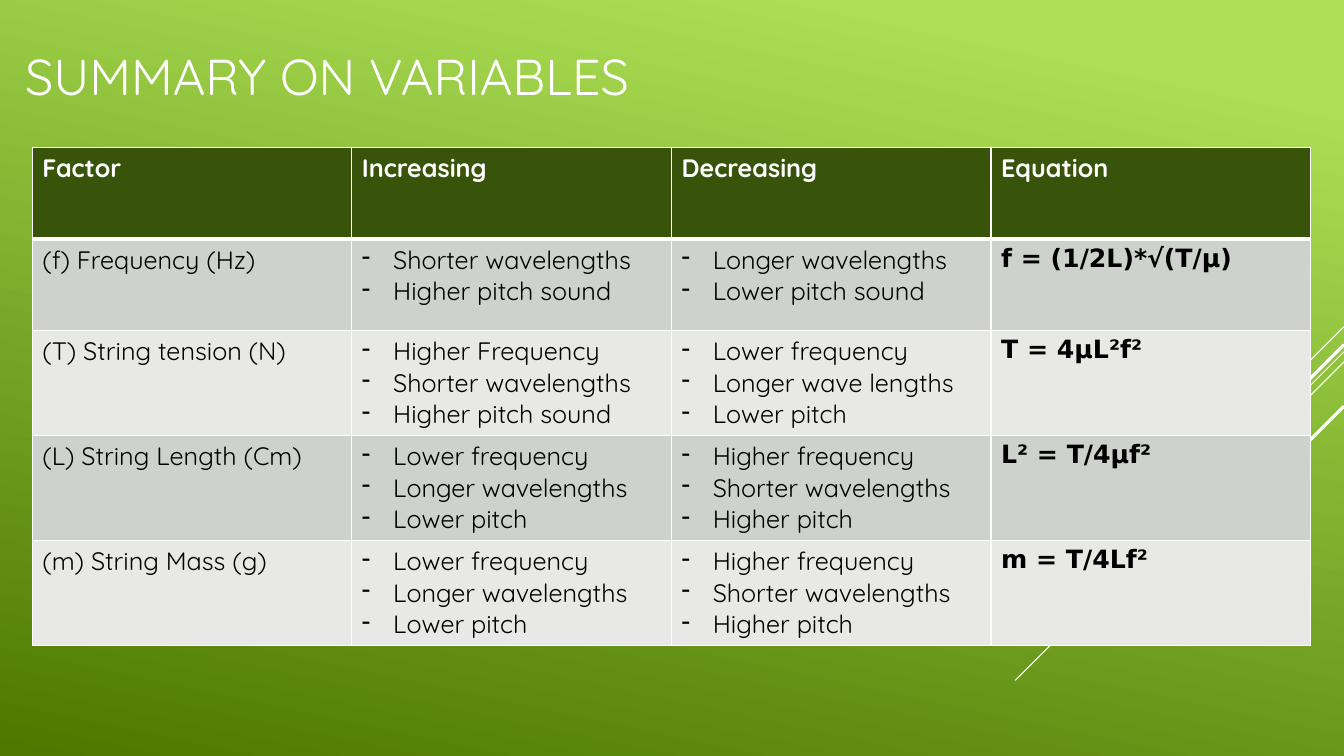
from lxml import etree
from pptx import Presentation
from pptx.dml.color import RGBColor
from pptx.enum.shapes import MSO_CONNECTOR as CONN
from pptx.enum.text import MSO_ANCHOR as ANCHOR, MSO_AUTO_SIZE as FIT, PP_ALIGN as ALIGN
from pptx.oxml.ns import qn
from pptx.util import Inches, Pt

W, H = 13.33, 7.5
WHITE = RGBColor(0xFF, 0xFF, 0xFF)
BLACK = RGBColor(0x00, 0x00, 0x00)
LIME = RGBColor(0xAC, 0xDF, 0x55)
MOSS = RGBColor(0x4C, 0x78, 0x00)
HEADER = RGBColor(0x38, 0x54, 0x0A)
BANDS = (RGBColor(0xCE, 0xD1, 0xCC), RGBColor(0xE8, 0xE9, 0xE7))
BODY_FONT, MATH_FONT = "Quicksand", "DejaVu Sans"

# Table grid
LEFT, TOP, COL_W, ROW_H, TABLE_H = 0.32, 1.46, 3.17, 0.91, 4.83
INDENT = 0.31

# Diagonals from the right edge: start height, run, weight
DIAGONALS = [(3.24, 1, 0.75), (3.49, 3.26, 0.75), (3.59, 2.07, 0.75),
             (3.42, 1.91, 2.25), (4.03, 1.39, 2.25)]

HEADINGS = ["Factor", "Increasing", "Decreasing", "Equation"]
LOWER = ["Lower frequency", "Longer wavelengths", "Lower pitch"]
HIGHER = ["Higher frequency", "Shorter wavelengths", "Higher pitch"]
ROWS = [
    ("(f) Frequency (Hz)",
     ["Shorter wavelengths", "Higher pitch sound"],
     ["Longer wavelengths", "Lower pitch sound"],
     "f = (1/2L)*√(T/μ)"),
    ("(T) String tension (N)",
     ["Higher Frequency", "Shorter wavelengths", "Higher pitch sound"],
     ["Lower frequency", "Longer wave lengths", "Lower pitch"],
     "T = 4μL²f²"),
    ("(L) String Length (Cm)", LOWER, HIGHER, "L² = T/4μf²"),
    ("(m) String Mass (g)", LOWER, HIGHER, "m = T/4Lf²"),
]


def style_text(tf, size, color, font=BODY_FONT, bold=False):
    for p in tf.paragraphs:
        for r in p.runs:
            r.font.size, r.font.name, r.font.bold = Pt(size), font, bold
            r.font.color.rgb = color


def paint_background(s):
    fill = s.background.fill
    fill.gradient()
    fill.gradient_angle = 360 - 102
    for stop, color, position in zip(fill.gradient_stops, (LIME, MOSS), (0.1, 1)):
        stop.color.rgb, stop.position = color, position


def add_diagonal(s, y, run, weight):
    ends = (W, y, W - run, y + run)
    line = s.shapes.add_connector(CONN.STRAIGHT, *map(Inches, ends))
    line.line.color.rgb, line.line.width = WHITE, Pt(weight)
    etree.SubElement(line._element.spPr, qn("a:effectLst"))


def set_title(s, text):
    title = s.shapes.title
    title.left, title.top = Inches(0.15), Inches(0.16)
    title.width, title.height = Inches(W), Inches(1.17)
    tf = title.text_frame
    tf.text = text
    tf.auto_size, tf.vertical_anchor = FIT.NONE, ANCHOR.MIDDLE
    tf.paragraphs[0].alignment = ALIGN.LEFT
    style_text(tf, 36, WHITE)


def set_borders(cell, top, bottom):
    tcPr = cell._tc.get_or_add_tcPr()
    for side, weight in (("L", 1), ("R", 1), ("T", top), ("B", bottom)):
        ln = etree.SubElement(tcPr, qn("a:ln" + side), w=str(Pt(weight)))
        fill = etree.SubElement(ln, qn("a:solidFill"))
        etree.SubElement(fill, qn("a:srgbClr"), val=str(WHITE))


def add_dash(p):
    pPr = p._p.get_or_add_pPr()
    pPr.set("marL", str(Inches(INDENT)))
    pPr.set("indent", str(-Inches(INDENT)))
    etree.SubElement(pPr, qn("a:buChar"), char="-")


def fill_cell(cell, content, row, is_math):
    header = row == 0
    set_borders(cell, 3 if row == 1 else 1, 3 if header else 1)
    cell.fill.solid()
    cell.fill.fore_color.rgb = HEADER if header else BANDS[(row - 1) % 2]
    tf = cell.text_frame
    if isinstance(content, list):
        tf.text = "\n".join(content)
        for p in tf.paragraphs:
            add_dash(p)
    else:
        tf.text = content
    style_text(tf, 18, WHITE if header else BLACK,
               MATH_FONT if is_math else BODY_FONT, header or is_math)


def add_variable_table(s):
    data = [HEADINGS] + ROWS
    n_cols = len(HEADINGS)
    frame = s.shapes.add_table(len(data), n_cols, Inches(LEFT), Inches(TOP),
                               Inches(COL_W * n_cols), Inches(TABLE_H))
    table = frame.table
    for col in table.columns:
        col.width = Inches(COL_W)
    for i, contents in enumerate(data):
        table.rows[i].height = Inches(ROW_H)
        for j, content in enumerate(contents):
            fill_cell(table.cell(i, j), content, i, i > 0 and j == n_cols - 1)
    frame.height = Inches(TABLE_H)


def main():
    prs = Presentation()
    prs.slide_width, prs.slide_height = Inches(W), Inches(H)
    s = prs.slides.add_slide(prs.slide_layouts[5])

    # Backdrop
    paint_background(s)
    for diagonal in DIAGONALS:
        add_diagonal(s, *diagonal)

    # Content
    set_title(s, "SUMMARY ON VARIABLES")
    add_variable_table(s)
    prs.save("out.pptx")


if __name__ == "__main__":
    main()
